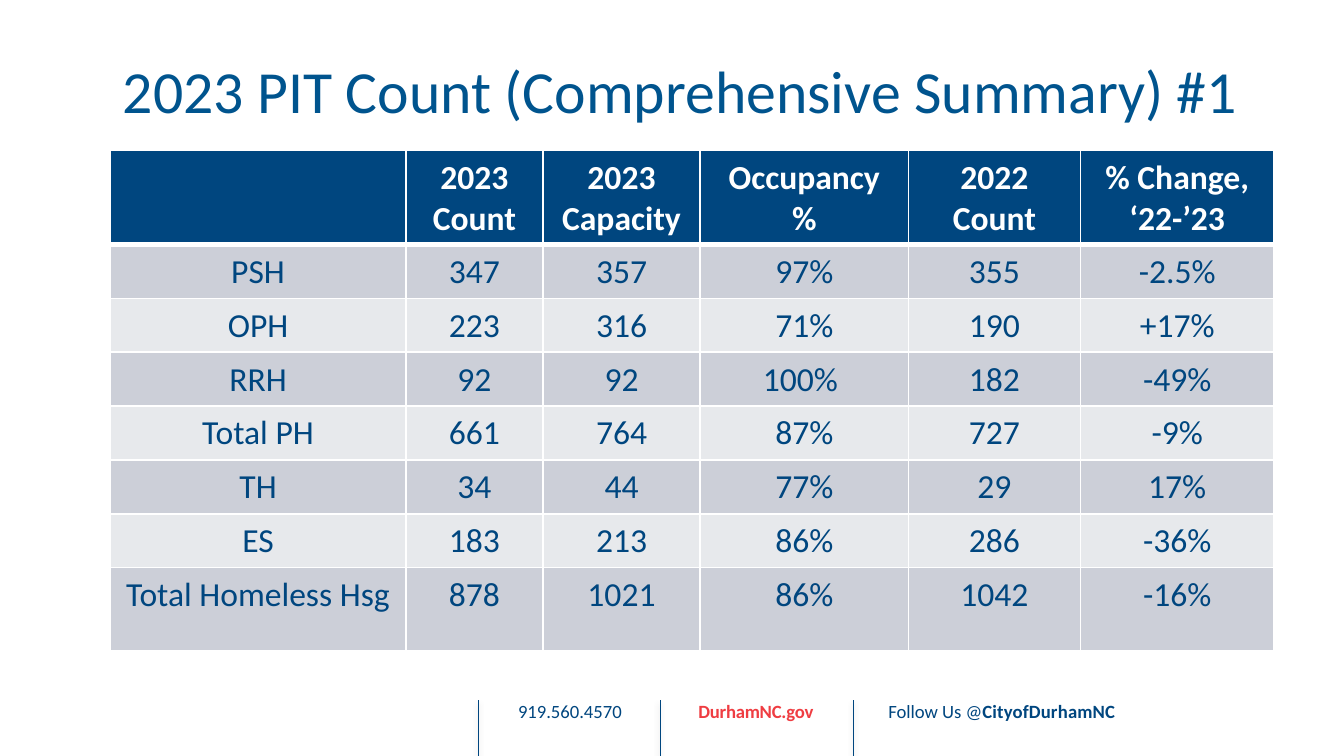
"""Build the 2023 PIT count summary slide with its table and contact footer."""
from pptx import Presentation
from pptx import util as u
from pptx.dml.color import RGBColor
from pptx.enum import shapes, text
from pptx.oxml import parse_xml
from pptx.oxml.ns import nsdecls

COLORS = {"navy": "00467F", "title": "00548E", "red": "EF3D42", "white": "FFFFFF",
          "dark band": "CCCFD8", "light band": "E7E9EC", "shadow": "000000"}
WIDTH, HEIGHT = 10, 10 * 9 / 16
TITLE = "2023 PIT Count (Comprehensive Summary) #1"
HEADERS = ["", "2023 Count", "2023 Capacity", "Occupancy %", "2022 Count", "% Change, ‘22-’23"]
ROWS = [
    ["PSH", "347", "357", "97%", "355", "-2.5%"],
    ["OPH", "223", "316", "71%", "190", "+17%"],
    ["RRH", "92", "92", "100% ", "182", "-49%"],
    ["Total PH", "661", "764", "87%", "727", "-9%"],
    ["TH", "34", "44", "77%", "29", "17%"],
    ["ES", "183", "213", "86%", "286", "-36%"],
    ["Total Homeless Hsg", "878", "1021", "86%", "1042", "-16%"],
]
TABLE_AT = (0.82, 1.12, 8.67, 3.72)
COLUMN_WIDTHS = [2.2, 1.02, 1.17, 1.55, 1.28, 1.44]
ROW_HEIGHTS = [0.67] + [0.38] * 6 + [0.62]
FOOTER = [
    (3.82, 0.84, "CENTER", [("919.560.4570", "navy", False, 0)]),
    (5.16, 0.93, "CENTER", [("DurhamNC.gov", "red", True, -10)]),
    (6.61, 2, "LEFT", [("Follow Us ", "navy", False, 0), ("@", "navy", False, 10),
                       ("CityofDurhamNC", "navy", True, 10)]),
]
DIVIDERS = [3.56, 4.91, 6.35]
SHADOW = (f'<a:effectLst {nsdecls("a")}><a:outerShdw blurRad="39370" dist="20320" dir="5400000" '
          f'rotWithShape="0"><a:srgbClr val="{COLORS["shadow"]}"><a:alpha val="38000"/>'
          '</a:srgbClr></a:outerShdw></a:effectLst>')


def color(name):
    return RGBColor.from_string(COLORS[name])


def write(para, spans, size, align="CENTER"):
    para.alignment = getattr(text.PP_ALIGN, align)
    for words, name, bold, spacing in spans:
        span = para.add_run()
        span.text = words
        for key, value in {"name": "Calibri", "size": u.Pt(size), "bold": bold}.items():
            setattr(span.font, key, value)
        span.font.color.rgb = color(name)
        if spacing:
            span.font._element.set("spc", str(spacing))


def add_text(page, at, spans, size, align="CENTER", **frame_format):
    frame = page.shapes.add_textbox(*map(u.Inches, at)).text_frame
    for key, value in {"word_wrap": True, **frame_format}.items():
        setattr(frame, key, value)
    write(frame.paragraphs[0], spans, size, align)


def add_borders(cell, widths):
    properties = cell._tc.get_or_add_tcPr()
    for position, (side, points) in enumerate(widths.items()):
        properties.insert(position, parse_xml(
            f'<a:ln{side} {nsdecls("a")} w="{u.Pt(points)}"><a:solidFill>'
            f'<a:srgbClr val="{COLORS["white"]}"/></a:solidFill></a:ln{side}>'))


def add_summary(page):
    holder = page.shapes.add_table(len(ROW_HEIGHTS), len(COLUMN_WIDTHS), *map(u.Inches, TABLE_AT))
    table = holder.table
    for column, width in zip(table.columns, COLUMN_WIDTHS):
        column.width = u.Inches(width)
    for row, height in zip(table.rows, ROW_HEIGHTS):
        row.height = u.Inches(height)
    holder.width, holder.height = map(u.Inches, TABLE_AT[2:])
    for i, values in enumerate([HEADERS] + ROWS):
        header = i == 0
        band = "navy" if header else "dark band" if i % 2 else "light band"
        for j, value in enumerate(values):
            cell = table.cell(i, j)
            cell.fill.solid()
            cell.fill.fore_color.rgb = color(band)
            add_borders(cell, {"L": 1, "R": 1, "T": 3 if i == 1 else 1, "B": 3 if header else 1})
            if value:
                ink = "white" if header else "navy"
                write(cell.text_frame.paragraphs[0], [(value, ink, header, 0)], 18)


def add_footer(page):
    for left, width, align, spans in FOOTER:
        add_text(page, (left, 5.16, width, 0.25), spans, 10, align, margin_left=0, margin_right=0)
    for x in DIVIDERS:
        ends = map(u.Inches, (x, 5.21, x, HEIGHT))
        line = page.shapes.add_connector(shapes.MSO_CONNECTOR.STRAIGHT, *ends)
        line.line.color.rgb = color("navy")
        line.line.width = u.Pt(0.25)
        line._element.spPr.append(parse_xml(SHADOW))


def main():
    deck = Presentation()
    deck.slide_width, deck.slide_height = u.Inches(WIDTH), u.Inches(HEIGHT)
    page = deck.slides.add_slide(deck.slide_layouts[6])
    add_footer(page)
    add_text(page, (0.45, 0.11, 9.23, 1.12), [(TITLE, "title", False, 0)], 32,
             vertical_anchor=text.MSO_ANCHOR.MIDDLE)
    add_summary(page)
    deck.save("out.pptx")


if __name__ == "__main__":
    main()
